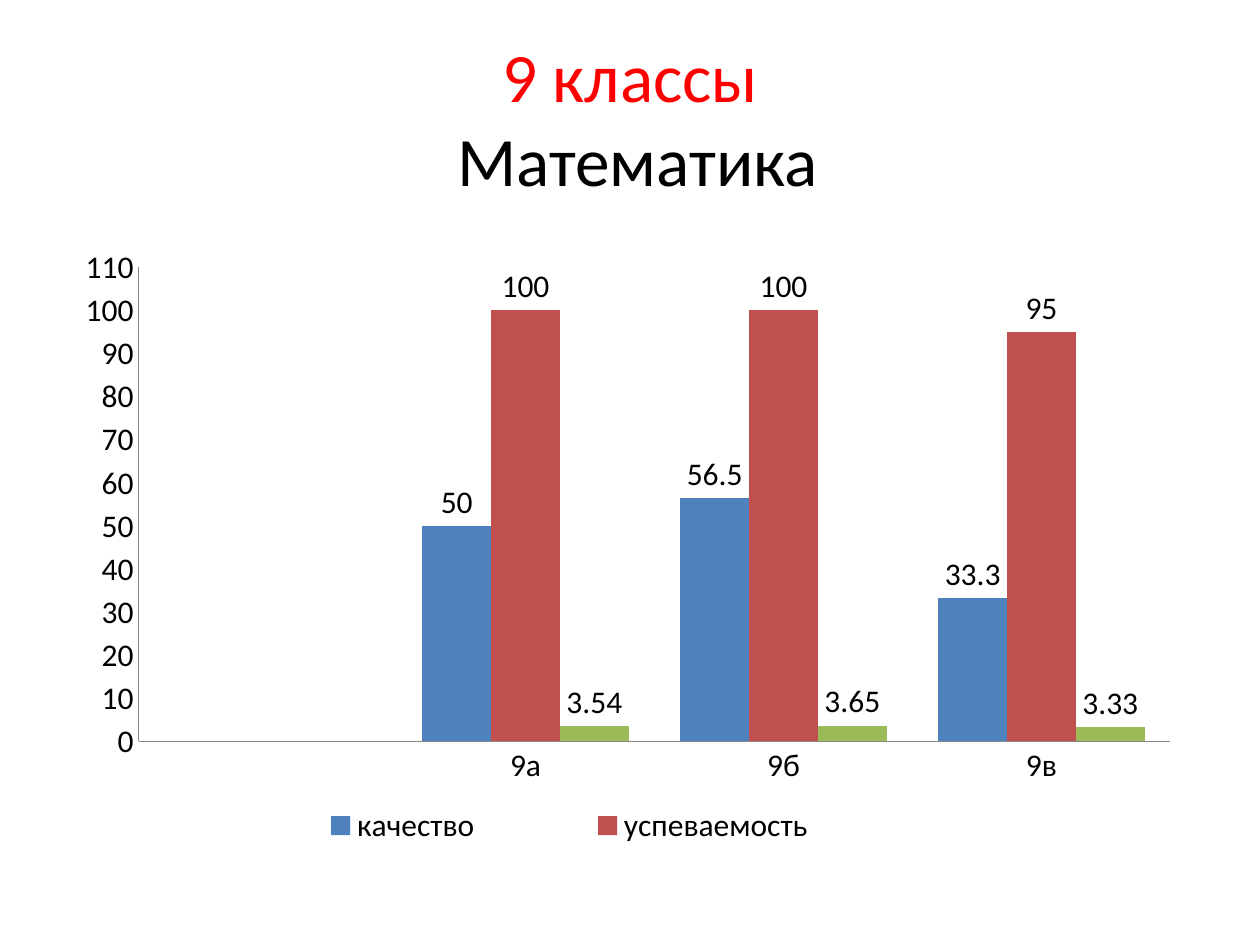
from lxml import etree
from pptx import Presentation
from pptx.chart.data import CategoryChartData
from pptx.dml.color import RGBColor
from pptx.enum.chart import XL_CHART_TYPE, XL_LABEL_POSITION, XL_LEGEND_POSITION, XL_TICK_MARK
from pptx.enum.text import MSO_ANCHOR, PP_ALIGN
from pptx.oxml.ns import qn
from pptx.util import Inches, Pt

COLUMNS = XL_CHART_TYPE.COLUMN_CLUSTERED
OUTSIDE = XL_LABEL_POSITION.OUTSIDE_END
BOTTOM = XL_LEGEND_POSITION.BOTTOM
NO_TICK = XL_TICK_MARK.NONE
MIDDLE = MSO_ANCHOR.MIDDLE
CENTER = PP_ALIGN.CENTER

RED = RGBColor(0xFF, 0x00, 0x00)
BLACK = RGBColor(0x00, 0x00, 0x00)
GRAY = RGBColor(0x86, 0x86, 0x86)
BLUE = RGBColor(0x4F, 0x81, 0xBD)
BRICK = RGBColor(0xC0, 0x50, 0x4D)
GREEN = RGBColor(0x9B, 0xBB, 0x59)

FONT = "Calibri"
TITLE = [("9 классы", RED), (" Математика", BLACK)]
CLASSES = ["", "9а", "9б", "9в"]
SERIES = [
    ("качество", BLUE, (None, 50, 56.5, 33.3)),
    ("успеваемость", BRICK, (None, 100, 100, 95)),
    ("Series 3", GREEN, (None, 3.54, 3.65, 3.33)),
]
HIDDEN_LEGEND_ENTRY = 2

WIDTH, HEIGHT = Inches(10), Inches(7.5)
TITLE_AREA = (0.05, 0.04, 0.9, 0.167)
CHART_AREA = (0.047, 0.25, 0.9, 0.66)
PLOT_SHARE = {"x": 0.07, "y": 0.05, "w": 0.91, "h": 0.76}
LEGEND_SHARE = {"x": 0.14, "y": 0.9, "w": 0.62, "h": 0.09}
VALUE_AXIS = {"minimum_scale": 0, "maximum_scale": 110, "major_unit": 10,
              "has_major_gridlines": False}


def place(area):
    return [round(share * side) for share, side in zip(area, (WIDTH, HEIGHT) * 2)]


def add_child(parent, tag, value=None):
    child = etree.SubElement(parent, qn(f"c:{tag}"))
    if value is not None:
        child.set("val", str(value))
    return child


def make_layout(shares, inner=False):
    layout = etree.Element(qn("c:layout"))
    manual = add_child(layout, "manualLayout")
    if inner:
        add_child(manual, "layoutTarget", "inner")
    for mode in ("xMode", "yMode"):
        add_child(manual, mode, "edge")
    for side, share in shares.items():
        add_child(manual, side, share)
    return layout


def set_font(font, size, color):
    for name, value in {"name": FONT, "size": Pt(size)}.items():
        setattr(font, name, value)
    font.color.rgb = color


def add_title(page):
    frame = page.shapes.add_textbox(*place(TITLE_AREA)).text_frame
    for name, value in {"word_wrap": True, "vertical_anchor": MIDDLE}.items():
        setattr(frame, name, value)
    para = frame.paragraphs[0]
    para.alignment = CENTER
    for index, (text, color) in enumerate(TITLE):
        if index:
            para.add_line_break()
        span = para.add_run()
        span.text = text
        set_font(span.font, 39.6, color)


def style_axis(axis, settings):
    for name, value in settings.items():
        setattr(axis, name, value)
    axis.major_tick_mark = axis.minor_tick_mark = NO_TICK
    axis.format.line.color.rgb = GRAY
    axis.format.line.width = Pt(0.75)


def add_legend(chart):
    chart.has_legend = True
    legend = chart.legend
    legend.position = BOTTOM
    legend.include_in_layout = False
    node = chart.element.find(".//" + qn("c:legend"))
    for old in node.findall(qn("c:layout")):
        node.remove(old)
    entry = etree.Element(qn("c:legendEntry"))
    add_child(entry, "idx", HIDDEN_LEGEND_ENTRY)
    add_child(entry, "delete", 1)
    position = node.find(qn("c:legendPos"))
    position.addnext(entry)
    entry.addnext(make_layout(LEGEND_SHARE))


def add_results(page):
    data = CategoryChartData()
    data.categories = CLASSES
    for name, _, values in SERIES:
        data.add_series(name, values)
    chart = page.shapes.add_chart(COLUMNS, *place(CHART_AREA), data).chart
    chart.has_title = False
    set_font(chart.font, 18, BLACK)

    plot = chart.plots[0]
    for name, value in {"gap_width": 75, "overlap": 0, "vary_by_categories": False}.items():
        setattr(plot, name, value)
    for series, (_, color, _) in zip(plot.series, SERIES):
        series.format.fill.solid()
        series.format.fill.fore_color.rgb = color
        labels = series.data_labels
        labels.show_value = True
        labels.position = OUTSIDE
    style_axis(chart.category_axis, {"has_major_gridlines": False})
    style_axis(chart.value_axis, VALUE_AXIS)

    plot_area = chart.element.find(".//" + qn("c:plotArea"))
    for old in plot_area.findall(qn("c:layout")):
        plot_area.remove(old)
    plot_area.insert(0, make_layout(PLOT_SHARE, inner=True))
    add_legend(chart)


def main():
    deck = Presentation()
    deck.slide_width, deck.slide_height = WIDTH, HEIGHT
    page = deck.slides.add_slide(deck.slide_layouts[6])
    add_title(page)
    add_results(page)
    deck.save("out.pptx")


if __name__ == "__main__":
    main()
